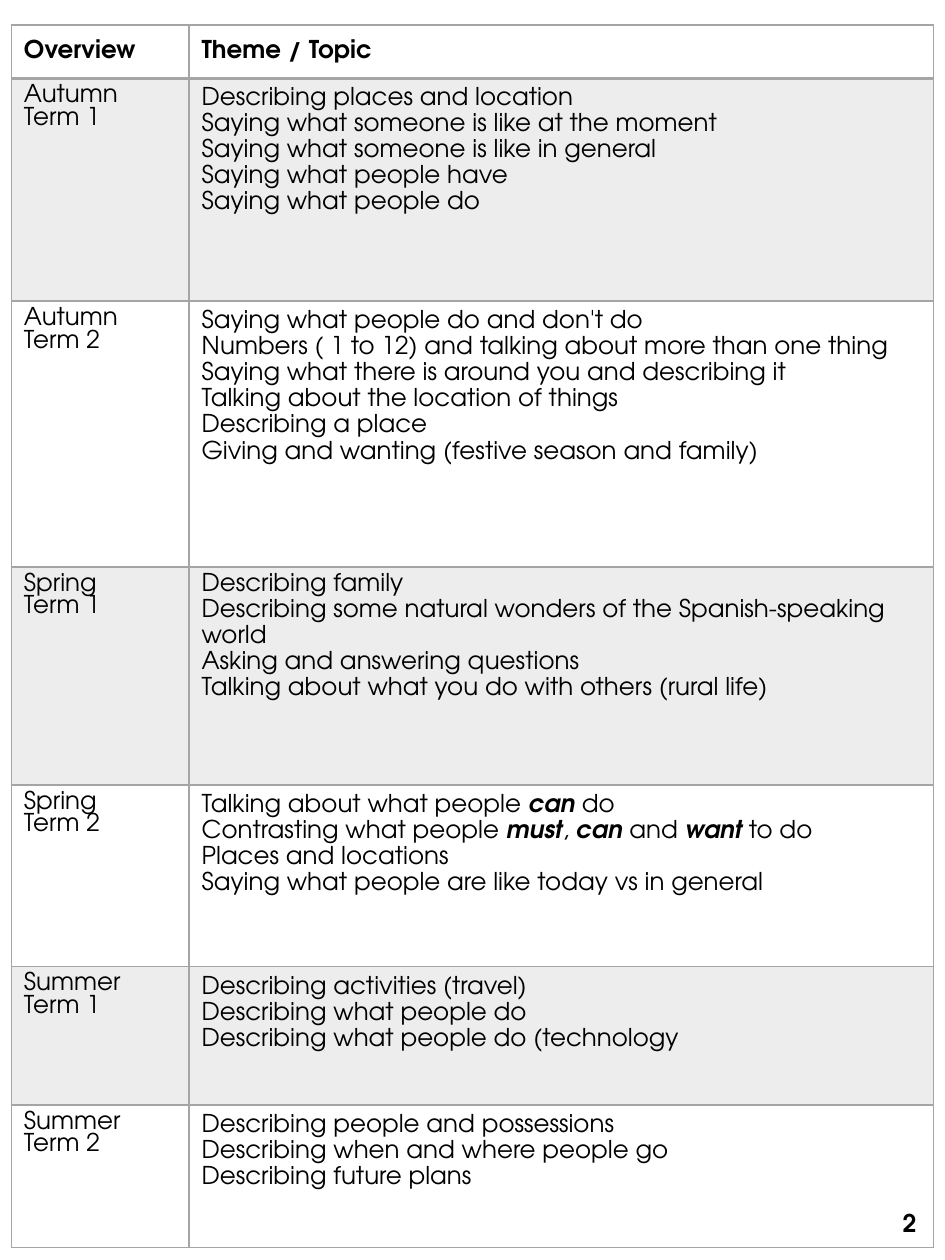
from lxml import etree
from pptx import Presentation
from pptx.dml.color import RGBColor
from pptx.enum import text
from pptx.oxml.ns import qn
from pptx.util import Pt

PX = 9144  # EMU per px, 100 px to the inch
COLORS = {"ink": "000000", "grey": "A5A5A5"}
FONT = {"name": "TeX Gyre Adventor", "size": Pt(14)}
COLUMNS = [141, 591]
HEADINGS = ["Overview", "Theme / Topic"]
HEADER_HEIGHT = 42

# Season, term, row height, spacing of the first topic, topics (* marks emphasis)
TERMS = [
    ("Autumn", 1, 177, 1.15, [
        "Describing places and location",
        "Saying what someone is like at the moment",
        "Saying what someone is like in general",
        "Saying what people have",
        "Saying what people do"]),
    ("Autumn", 2, 211, 1.15, [
        "Saying what people do and don't do",
        "Numbers ( 1 to 12) and talking about more than one thing",
        "Saying what there is around you and describing it",
        "Talking about the location of things",
        "Describing a place",
        "Giving and wanting (festive season and family)"]),
    ("Spring", 1, 173, 1.0, [
        "Describing family",
        "Describing some natural wonders of the Spanish-speaking world",
        "Asking and answering questions",
        "Talking about what you do with others (rural life)"]),
    ("Spring", 2, 144, 1.15, [
        "Talking about what people *can* do",
        "Contrasting what people *must*, *can* and *want* to do",
        "Places and locations",
        "Saying what people are like today vs in general"]),
    ("Summer", 1, 110, 1.15, [
        "Describing activities (travel)",
        "Describing what people do",
        "Describing what people do (technology"]),
    ("Summer", 2, 113, 1.15, [
        "Describing people and possessions",
        "Describing when and where people go",
        "Describing future plans"]),
]


def add_span(para, words, **extra):
    span = para.add_run()
    span.text = words
    for name, value in {**FONT, **extra}.items():
        setattr(span.font, name, value)
    span.font.color.rgb = RGBColor.from_string(COLORS["ink"])


def style_cell(cell, shaded, top=1, bottom=1):
    # Fill
    if shaded:
        cell.fill.solid()
        cell.fill.fore_color.rgb = RGBColor.from_string(COLORS["grey"])
        color = cell._tc.tcPr.find(".//" + qn("a:srgbClr"))
        etree.SubElement(color, qn("a:alpha"), val="20000")
    else:
        cell.fill.background()
    # Borders come before the fill
    widths = {"a:lnL": 1, "a:lnR": 1, "a:lnT": top, "a:lnB": bottom}
    for index, (tag, width) in enumerate(widths.items()):
        line = etree.Element(qn(tag), w=str(Pt(width)))
        paint = etree.SubElement(line, qn("a:solidFill"))
        etree.SubElement(paint, qn("a:srgbClr"), val=COLORS["grey"])
        cell._tc.tcPr.insert(index, line)


def fill_topics(frame, topics, first_spacing):
    for index, topic in enumerate(topics):
        para = frame.add_paragraph() if index else frame.paragraphs[0]
        para.line_spacing = 1.15 if index else first_spacing
        for part, words in enumerate(topic.split("*")):
            strong = part % 2 == 1
            add_span(para, words, bold=strong, italic=strong)


def add_overview(page, left, top, width, height):
    frame = page.shapes.add_table(len(TERMS) + 1, len(COLUMNS),
                                  left * PX, top * PX, width * PX, height * PX)
    table = frame.table
    table.first_row = table.horz_banding = False
    for column, size in zip(table.columns, COLUMNS):
        column.width = size * PX

    # Header row
    table.rows[0].height = HEADER_HEIGHT * PX
    for cell, heading in zip(table.rows[0].cells, HEADINGS):
        style_cell(cell, shaded=False, bottom=2)
        cell.vertical_anchor = text.MSO_ANCHOR.MIDDLE
        add_span(cell.text_frame.paragraphs[0], heading, bold=True)

    # One row for each term, every other one shaded
    for index, (season, term, size, spacing, topics) in enumerate(TERMS, 1):
        row = table.rows[index]
        row.height = size * PX
        for cell in row.cells:
            style_cell(cell, shaded=index % 2 == 1, top=2 if index == 1 else 1)
        name, content = row.cells
        para = name.text_frame.paragraphs[0]
        add_span(para, season, bold=False)
        para.add_line_break()
        add_span(para, f"Term {term}", bold=False)
        fill_topics(content.text_frame, topics, spacing)


def add_page_number(page, left, top, width, height):
    box = page.shapes.add_textbox(left * PX, top * PX, width * PX, height * PX)
    box.text_frame.word_wrap = True
    para = box.text_frame.paragraphs[0]
    para.alignment = text.PP_ALIGN.RIGHT
    add_span(para, "2", bold=True)


def main():
    deck = Presentation()
    deck.slide_width, deck.slide_height = 750 * PX, 1000 * PX
    page = deck.slides.add_slide(deck.slide_layouts[6])
    add_overview(page, 9, 20, sum(COLUMNS), 969)
    add_page_number(page, 562, 954, 175, 69)
    deck.save("out.pptx")


if __name__ == "__main__":
    main()
